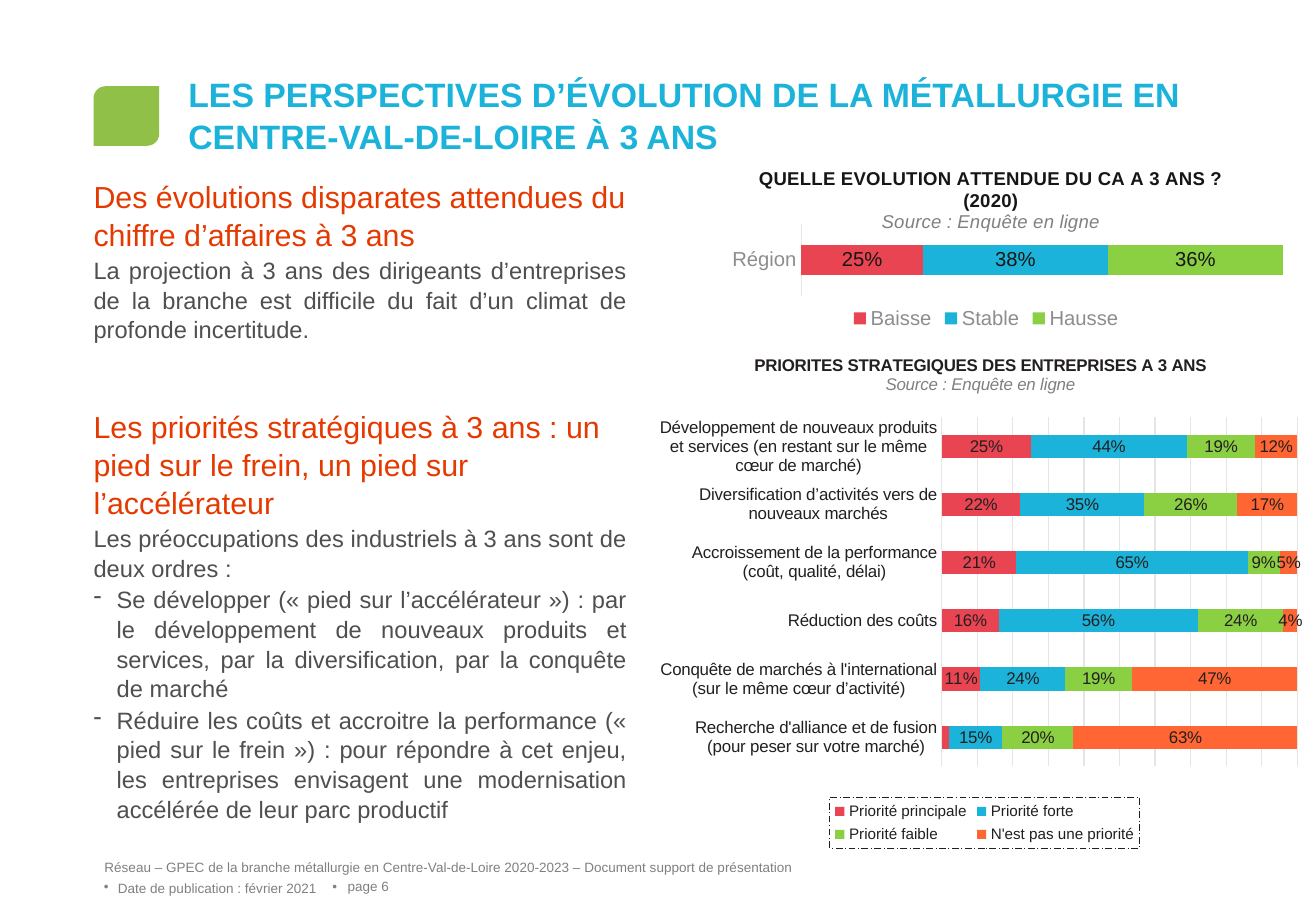
from dataclasses import dataclass

import pptx
import pptx.chart.data
import pptx.dml.color
import pptx.enum.chart
import pptx.enum.shapes
import pptx.enum.text
import pptx.oxml
import pptx.oxml.ns
import pptx.util

Pt = pptx.util.Pt
qn = pptx.oxml.ns.qn
Align = pptx.enum.text.PP_ALIGN
Anchor = pptx.enum.text.MSO_ANCHOR
EMU_PER_PX = 9144  # 100 px to the inch
FONT = "Arial"
LINE_SPACING = 1.05
COLORS = {
    "blue": "1BB3D9", "red": "E94451", "green": "8BCF43", "orange": "FF6633",
    "leaf": "90C047", "heading": "E53900", "body": "4F4F4F", "footer": "808080",
    "axis": "8D8D8D", "black": "161615", "ink": "231F20", "rule": "E5E5E5",
}
C_NS = ('xmlns:c="http://schemas.openxmlformats.org/drawingml/2006/chart" '
        'xmlns:a="http://schemas.openxmlformats.org/drawingml/2006/main"')


@dataclass
class Box:
    x: int
    y: int
    w: int
    h: int

    def emu(self) -> list:
        return [v * EMU_PER_PX for v in (self.x, self.y, self.w, self.h)]


@dataclass
class Para:
    text: str
    size: int = 14
    color: str = "body"
    bold: bool = False
    align: Align = Align.LEFT
    dash: bool = False
    before: int = 0
    after: int = 0
    spacing: float = LINE_SPACING


@dataclass
class Series:
    name: str
    values: tuple
    color: str


@dataclass
class BarChart:
    box: Box
    title: str
    title_size: int
    title_at: tuple
    plot: tuple
    categories: list
    series: list
    label_size: int
    label_color: str
    axis_color: str
    legend_size: int
    legend_box: tuple = ()
    grid: bool = False
    hidden_label: bool = False


def rgb(name: str) -> pptx.dml.color.RGBColor:
    return pptx.dml.color.RGBColor.from_string(COLORS[name])


def style(font, size: int, color: str, bold: bool = False, italic: bool = False) -> None:
    font.name, font.size, font.bold, font.italic = FONT, Pt(size), bold, italic
    font.color.rgb = rgb(color)


def add_text(s, box: Box, paras: list, anchor: Anchor = Anchor.TOP) -> None:
    tf = s.shapes.add_textbox(*box.emu()).text_frame
    tf.word_wrap, tf.vertical_anchor = True, anchor
    tf.margin_left = tf.margin_top = tf.margin_right = tf.margin_bottom = 0
    for i, para in enumerate(paras):
        p = tf.add_paragraph() if i else tf.paragraphs[0]
        if para.dash:
            pPr = p._p.get_or_add_pPr()
            pPr.set("marL", str(19 * EMU_PER_PX))
            pPr.set("indent", str(-19 * EMU_PER_PX))
            pPr.append(pptx.oxml.parse_xml(f'<a:buChar {C_NS} char="-"/>'))
        p.alignment, p.line_spacing = para.align, para.spacing
        p.space_after = Pt(para.after)
        if para.before:
            p.space_before = Pt(para.before)
        r = p.add_run()
        r.text = para.text
        style(r.font, para.size, para.color, para.bold)


def set_layout(parent, index: int, at: tuple, inner: bool = False) -> None:
    """Fix the place of a chart part, as fractions of the chart."""
    for old in parent.findall(qn("c:layout")):
        parent.remove(old)
    tags = ('<c:layoutTarget val="inner"/>' if inner else "")
    tags += '<c:xMode val="edge"/><c:yMode val="edge"/>'
    tags += "".join(f'<c:{k} val="{v}"/>' for k, v in zip("xywh", at))
    parent.insert(index, pptx.oxml.parse_xml(
        f"<c:layout {C_NS}><c:manualLayout>{tags}</c:manualLayout></c:layout>"))


def frame_legend(legend) -> None:
    legend._element.find(qn("c:txPr")).addprevious(pptx.oxml.parse_xml(
        f'<c:spPr {C_NS}><a:ln w="6350"><a:solidFill><a:srgbClr val="{COLORS["ink"]}"/>'
        '</a:solidFill><a:prstDash val="lgDashDot"/></a:ln></c:spPr>'))


def add_title(chart, spec: BarChart) -> None:
    chart.has_title = True
    tf = chart.chart_title.text_frame
    source = tf.add_paragraph()
    for p, text, bold in ((tf.paragraphs[0], spec.title, True),
                          (source, "Source : Enquête en ligne", False)):
        r = p.add_run()
        r.text = text
        style(r.font, spec.title_size, spec.label_color if bold else "footer", bold, not bold)
    set_layout(chart.chart_title._element, 1, spec.title_at)


def add_bar_chart(s, spec: BarChart) -> None:
    data = pptx.chart.data.CategoryChartData(number_format="0%")
    data.categories = spec.categories
    for item in spec.series:
        data.add_series(item.name, item.values)
    kind = pptx.enum.chart.XL_CHART_TYPE.BAR_STACKED_100
    chart = s.shapes.add_chart(kind, *spec.box.emu(), data).chart
    style(chart.font, 10, "body")
    add_title(chart, spec)

    plot = chart.plots[0]
    plot.gap_width, plot.overlap, plot.vary_by_categories = 150, 100, False
    set_layout(chart._chartSpace.chart.plotArea, 0, spec.plot, inner=True)
    for item, ser in zip(spec.series, plot.series):
        ser.format.fill.solid()
        ser.format.fill.fore_color.rgb = rgb(item.color)
        labels = ser.data_labels
        labels.show_value, labels.number_format = True, "0%"
        labels.number_format_is_linked = False
        labels.position = pptx.enum.chart.XL_LABEL_POSITION.CENTER
        style(labels.font, spec.label_size, spec.label_color)
    if spec.hidden_label:
        plot.series[0].data_labels._element.insert(0, pptx.oxml.parse_xml(
            f'<c:dLbl {C_NS}><c:idx val="0"/><c:delete val="1"/></c:dLbl>'))

    cat, val = chart.category_axis, chart.value_axis
    cat.major_tick_mark = pptx.enum.chart.XL_TICK_MARK.NONE
    cat.format.line.color.rgb = rgb("rule")
    cat.format.line.width = Pt(0.75)
    style(cat.tick_labels.font, spec.label_size, spec.axis_color)
    val.minimum_scale, val.maximum_scale, val.major_unit = 0, 1, 0.1
    val.visible, val.has_major_gridlines = False, spec.grid
    if spec.grid:
        val.major_gridlines.format.line.color.rgb = rgb("rule")
        val.major_gridlines.format.line.width = Pt(0.75)

    chart.has_legend = True
    legend = chart.legend
    legend.position = pptx.enum.chart.XL_LEGEND_POSITION.BOTTOM
    legend.include_in_layout = False
    style(legend.font, spec.legend_size, spec.axis_color)
    if spec.legend_box:
        set_layout(legend._element, 1, spec.legend_box)
        frame_legend(legend)


FOOTER = [
    (Box(286, 723, 108, 13), "page 6", Align.LEFT, Anchor.TOP),
    (Box(97, 725, 187, 13), "Date de publication : février 2021", Align.LEFT, Anchor.MIDDLE),
    (Box(86, 707, 787, 13), "Réseau – GPEC de la branche métallurgie en Centre-Val-de-Loire "
     "2020-2023 – Document support de présentation", Align.LEFT, Anchor.MIDDLE),
    (Box(77, 723, 21, 13), "•", Align.CENTER, Anchor.MIDDLE),
    (Box(265, 723, 21, 13), "•", Align.CENTER, Anchor.MIDDLE),
]
BODY = [
    Para("Des évolutions disparates attendues du chiffre d’affaires à 3 ans", 18, "heading", after=1),
    Para("La projection à 3 ans des dirigeants d’entreprises de la branche est difficile du fait "
         "d’un climat de profonde incertitude.", align=Align.JUSTIFY, after=1),
    Para("Les priorités stratégiques à 3 ans : un pied sur le frein, un pied sur l’accélérateur",
         18, "heading", before=36, after=1),
    Para("Les préoccupations des industriels à 3 ans sont de deux ordres :",
         align=Align.JUSTIFY, after=1),
    Para("Se développer (« pied sur l’accélérateur ») : par le développement de nouveaux produits "
         "et services, par la diversification, par la conquête de marché",
         align=Align.JUSTIFY, dash=True, after=1),
    Para("Réduire les coûts et accroitre la performance (« pied sur le frein ») : pour répondre à "
         "cet enjeu, les entreprises envisagent une modernisation accélérée de leur parc productif",
         align=Align.JUSTIFY, dash=True, after=1),
]
TURNOVER = BarChart(
    Box(540, 121, 543, 154), "QUELLE EVOLUTION ATTENDUE DU CA A 3 ANS ? (2020)", 11,
    (0.15, 0.08), (0.22, 0.41, 0.73, 0.39), ["Région"],
    [Series("Baisse", (0.25,), "red"), Series("Stable", (0.38,), "blue"),
     Series("Hausse", (0.36,), "green")], 12, "black", "axis", 12)
PRIORITIES = BarChart(
    Box(542, 276, 542, 423), "PRIORITES STRATEGIQUES DES ENTREPRISES A 3 ANS", 10,
    (0.14, 0.03), (0.43, 0.16, 0.54, 0.68),
    ["Recherche d'alliance et de fusion (pour peser sur votre marché)",
     "Conquête de marchés à l'international (sur le même cœur d’activité)",
     "Réduction des coûts",
     "Accroissement de la performance (coût, qualité, délai)",
     "Diversification d’activités vers de nouveaux marchés",
     "Développement de nouveaux produits et services (en restant sur le même cœur de marché)"],
    [Series("Priorité principale", (0.02, 0.11, 0.16, 0.21, 0.22, 0.25), "red"),
     Series("Priorité forte", (0.15, 0.24, 0.56, 0.65, 0.35, 0.44), "blue"),
     Series("Priorité faible", (0.2, 0.19, 0.24, 0.09, 0.26, 0.19), "green"),
     Series("N'est pas une priorité", (0.63, 0.47, 0.04, 0.05, 0.17, 0.12), "orange")],
    10, "ink", "ink", 9, (0.26, 0.9, 0.47, 0.1), grid=True, hidden_label=True)


def main() -> None:
    prs = pptx.Presentation()
    prs.slide_width, prs.slide_height = 1083 * EMU_PER_PX, 750 * EMU_PER_PX
    s = prs.slides.add_slide(prs.slide_layouts[6])
    for box, text, align, anchor in FOOTER:
        add_text(s, box, [Para(text, 8, "footer", align=align, spacing=1.0)], anchor)
    sp = s.shapes.add_shape(pptx.enum.shapes.MSO_SHAPE.ROUND_2_DIAG_RECTANGLE,
                            *Box(77, 71, 54, 49).emu())
    sp.adjustments[0], sp.adjustments[1] = 0.2, 0
    sp.shadow.inherit = False
    sp.fill.solid()
    sp.fill.fore_color.rgb = rgb("leaf")
    sp.line.fill.background()
    add_text(s, Box(155, 86, 851, 43), [Para(
        "LES PERSPECTIVES D’ÉVOLUTION DE LA MÉTALLURGIE EN CENTRE-VAL-DE-LOIRE À 3 ANS",
        20, "blue", bold=True)], Anchor.BOTTOM)
    add_text(s, Box(77, 145, 439, 534), BODY)
    for chart in (TURNOVER, PRIORITIES):
        add_bar_chart(s, chart)
    prs.save("out.pptx")


if __name__ == "__main__":
    main()
